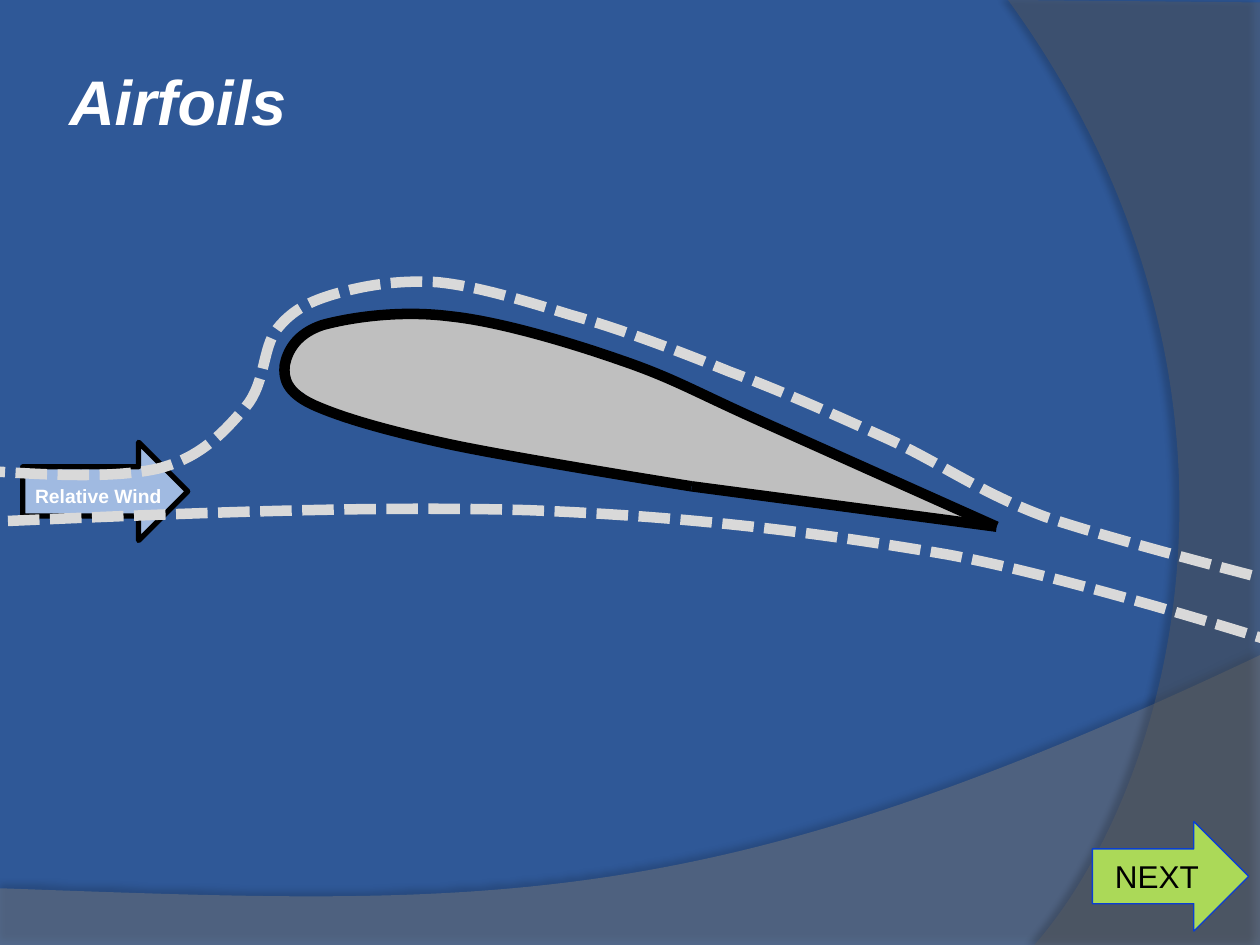
from pptx import Presentation
from pptx.dml.color import RGBColor
from pptx.enum.dml import MSO_LINE
from pptx.enum.shapes import MSO_CONNECTOR, MSO_SHAPE
from pptx.enum.text import MSO_ANCHOR, PP_ALIGN
from pptx.oxml.ns import qn
from pptx.oxml.xmlchemy import OxmlElement
from pptx.util import Inches, Pt

DASHED = MSO_LINE.SQUARE_DOT
STRAIGHT = MSO_CONNECTOR.STRAIGHT
ELLIPSE, ARROW = MSO_SHAPE.OVAL, MSO_SHAPE.RIGHT_ARROW
MIDDLE, TOP = MSO_ANCHOR.MIDDLE, MSO_ANCHOR.TOP
LEFT, CENTER = PP_ALIGN.LEFT, PP_ALIGN.CENTER

WING = "BFBFBF"
OUTLINE = {"color": "000000", "width": 6}
AIRFLOW = {"color": "D9D9D9", "width": 6, "dash": DASHED}

# Each outline is a start point, then line ends (2 numbers) or curves (6 numbers).
GROUND_SWEEP = [(0, 7.05), (0, 7.5), (10, 7.5), (10, 5.2),
                (5.59, 7.29, 3.91, 7.19, 0, 7.05)]
SIDE_SWEEP = [(10, 0.02), (10, 7.5), (8.21, 7.5),
              (9.35, 6.19, 10.18, 3, 8, 0), (10, 0.02)]
WING_BODY = [(7.65, 4.11),
             (7.79, 4.02, 6.19, 3.4, 5.68, 3.18),
             (5.18, 2.95, 4.95, 2.87, 4.6, 2.76),
             (4.25, 2.65, 3.88, 2.56, 3.57, 2.53),
             (3.27, 2.49, 2.99, 2.51, 2.79, 2.54),
             (2.58, 2.57, 2.44, 2.65, 2.36, 2.73),
             (2.28, 2.8, 2.29, 2.89, 2.32, 2.97),
             (2.35, 3.06, 2.41, 3.15, 2.55, 3.22),
             (2.7, 3.3, 3.18, 3.43, 3.18, 3.43),
             (4.84, 3.75),
             (5.59, 3.87, 7.51, 4.21, 7.65, 4.11)]
WING_EDGE = [(7.91, 4.18), (6.01, 3.33),
             (5.52, 3.11, 5.34, 3, 4.93, 2.86),
             (4.53, 2.72, 3.96, 2.55, 3.57, 2.51),
             (3.17, 2.46, 2.78, 2.52, 2.56, 2.58),
             (2.35, 2.65, 2.28, 2.79, 2.26, 2.9),
             (2.25, 3, 2.27, 3.11, 2.48, 3.21),
             (2.7, 3.31, 3.04, 3.41, 3.54, 3.52),
             (4.04, 3.63, 5.49, 3.86, 5.49, 3.86)]
UPPER_FLOW = [(-0.21, 3.73),
              (0.34, 3.77, 0.89, 3.8, 1.25, 3.72),
              (1.61, 3.63, 1.79, 3.41, 1.95, 3.23),
              (2.11, 3.04, 2.08, 2.76, 2.2, 2.61),
              (2.32, 2.46, 2.46, 2.39, 2.67, 2.33),
              (2.88, 2.27, 3.15, 2.22, 3.47, 2.24),
              (3.78, 2.27, 4.14, 2.38, 4.53, 2.5),
              (4.92, 2.61, 5.37, 2.78, 5.79, 2.95),
              (6.22, 3.11, 6.64, 3.3, 7.06, 3.49),
              (7.47, 3.68, 7.78, 3.91, 8.29, 4.1),
              (8.81, 4.28, 10.14, 4.62, 10.14, 4.62)]
LOWER_FLOW = [(-0.27, 4.15),
              (1.32, 4.08, 2.9, 4.01, 4.2, 4.05),
              (5.49, 4.1, 6.51, 4.23, 7.51, 4.4),
              (8.5, 4.58, 10.16, 5.11, 10.16, 5.11)]


def rgb(value):
    """Turn a hex string into a colour."""
    return RGBColor.from_string(value)


def style_line(line, color, width, dash=None):
    """Give a line its colour, width in points and dash."""
    line.color.rgb = rgb(color)
    line.width = Pt(width)
    if dash:
        line.dash_style = dash


def style_shape(shape, fill=None, line=None):
    """Set fill and line of a shape and drop its shadow."""
    shape.shadow.inherit = False
    if fill:
        shape.fill.solid()
        shape.fill.fore_color.rgb = rgb(fill)
    else:
        shape.fill.background()
    if line:
        style_line(shape.line, **line)
    else:
        shape.line.fill.background()


def add_preset(slide, kind, box, fill, line=None):
    """Add a preset shape."""
    shape = slide.shapes.add_shape(kind, *map(Inches, box))
    style_shape(shape, fill, line)
    return shape


def add_outline(slide, segments, fill=None, line=None):
    """Add a freeform of straight and curved segments."""
    points = [(Inches(x), Inches(y)) for segment in segments
              for x, y in zip(segment[::2], segment[1::2])]
    builder = slide.shapes.build_freeform(*points[0])
    builder.add_line_segments(points[1:], close=fill is not None)
    shape = builder.convert_to_shape()
    steps = iter(list(shape._element.iter(qn("a:lnTo"))))
    for segment in segments[1:]:
        step = next(steps)
        if len(segment) == 6:
            curve = OxmlElement("a:cubicBezTo")
            step.addprevious(curve)
            for control in (step, next(steps), next(steps)):
                curve.append(control[0])
                control.getparent().remove(control)
    style_shape(shape, fill, line)
    return shape


def add_alpha(color_element, percent):
    """Set the opacity of a colour element."""
    alpha = OxmlElement("a:alpha")
    alpha.set("val", str(percent * 1000))
    color_element.append(alpha)


def add_sweep(slide, segments, fill, opacity, shadow_opacity, distance, angle):
    """Add a translucent backdrop shape with a soft shadow."""
    properties = add_outline(slide, segments, fill)._element.spPr
    add_alpha(properties.find(qn("a:solidFill"))[0], opacity)
    shadow = OxmlElement("a:outerShdw")
    values = {"blurRad": Pt(4), "dist": Pt(distance), "dir": angle * 60000,
              "algn": "ctr", "rotWithShape": 0}
    for name, value in values.items():
        shadow.set(name, str(int(value)) if name != "algn" else value)
    color = OxmlElement("a:srgbClr")
    color.set("val", "000000")
    add_alpha(color, shadow_opacity)
    shadow.append(color)
    properties.find(qn("a:effectLst")).append(shadow)


def add_edge(slide, start, end):
    """Add a straight wing edge."""
    edge = slide.shapes.add_connector(STRAIGHT, *map(Inches, start + end))
    style_line(edge.line, **OUTLINE)
    edge._element.spPr.append(OxmlElement("a:effectLst"))


def write(shape, text, size, color, align=LEFT, anchor=TOP, frame_format=None, **font_format):
    """Write one line of Arial text into a shape."""
    frame = shape.text_frame
    for name, value in {"word_wrap": True, "vertical_anchor": anchor, **(frame_format or {})}.items():
        setattr(frame, name, value)
    paragraph = frame.paragraphs[0]
    paragraph.alignment = align
    run = paragraph.add_run()
    run.text = text
    for name, value in {"name": "Arial", "size": Pt(size), **font_format}.items():
        setattr(run.font, name, value)
    run.font.color.rgb = rgb(color)


def add_label(slide, box, *content, **options):
    """Add a text box."""
    write(slide.shapes.add_textbox(*map(Inches, box)), *content, **options)


def main():
    """Build the airfoil slide."""
    deck = Presentation()
    deck.slide_width, deck.slide_height = Inches(10), Inches(7.5)
    slide = deck.slides.add_slide(deck.slide_layouts[6])
    slide.background.fill.solid()
    slide.background.fill.fore_color.rgb = rgb("2F5897")

    add_sweep(slide, GROUND_SWEEP, "7F7F7F", 45, 35, 3.5, 270)
    add_sweep(slide, SIDE_SWEEP, "5E5E5E", 40, 45, 4, 180)

    add_preset(slide, ELLIPSE, (2.29, 2.79, 0.28, 0.33), WING)
    add_outline(slide, WING_BODY, fill=WING)
    add_outline(slide, WING_EDGE, line=OUTLINE)
    add_edge(slide, (5.49, 3.86), (7.91, 4.18))

    insets = dict.fromkeys(
        ("margin_left", "margin_top", "margin_right", "margin_bottom"), Inches(0.05))
    add_label(slide, (0.5, 0.17, 8.17, 1.25), "Airfoils", 36, "FFFFFF",
              anchor=MIDDLE, frame_format=insets, bold=True, italic=True)
    next_arrow = add_preset(slide, ARROW, (8.67, 6.52, 1.24, 0.87), "ABD958",
                            {"color": "0A3ED3", "width": 0.75})
    write(next_arrow, "NEXT", 18, "000000", align=CENTER, anchor=MIDDLE)

    add_preset(slide, ARROW, (0.18, 3.51, 1.31, 0.78), "A0BAE1",
               {"color": "000000", "width": 3})
    add_label(slide, (0.18, 3.79, 1.21, 0.29), "Relative Wind", 11, "FFFFFF",
              frame_format={"word_wrap": False}, bold=True)
    for flow in (UPPER_FLOW, LOWER_FLOW):
        add_outline(slide, flow, line=AIRFLOW)

    deck.save("out.pptx")


if __name__ == "__main__":
    main()
